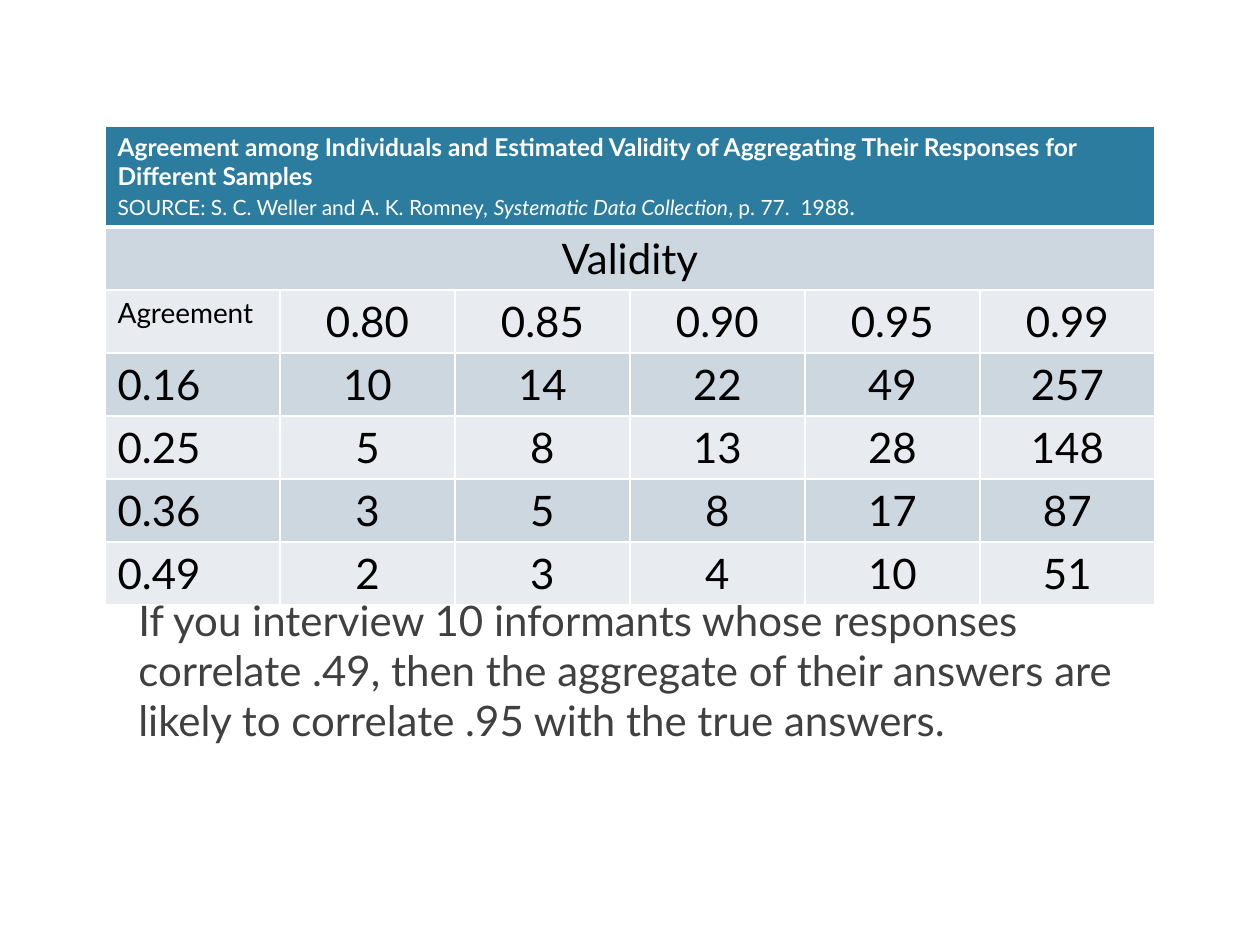
from lxml import etree
from pptx import Presentation
from pptx.dml.color import RGBColor
from pptx.enum.text import PP_ALIGN
from pptx.oxml.ns import qn
from pptx.util import Pt

LEFT, CENTER = PP_ALIGN.LEFT, PP_ALIGN.CENTER
FONT = "Lato"
WHITE, BLACK, GRAY = "FFFFFF", "000000", "404040"
HEADER_FILL, DARK_BAND, LIGHT_BAND = "2C7C9F", "CDD7DF", "E8ECF0"

# Content: each paragraph is a list of (text, format) runs
SOURCE_FORMAT = {"size": Pt(12)}
TITLE = [
    [("Agreement among Individuals and Estimated Validity of Aggregating "
      "Their Responses for Different Samples", {"size": Pt(14), "bold": True})],
    [("SOURCE: S. C. Weller and A. K. Romney, ", SOURCE_FORMAT),
     ("Systematic Data Collection", {"size": Pt(12), "italic": True}),
     (", p. 77.  1988", SOURCE_FORMAT),
     (".", {"size": Pt(14)})],
]
SPANNER = "Validity"
ROWS = [
    ("Agreement", "0.80", "0.85", "0.90", "0.95", "0.99"),
    ("0.16", "10", "14", "22", "49", "257"),
    ("0.25", "5", "8", "13", "28", "148"),
    ("0.36", "3", "5", "8", "17", "87"),
    ("0.49", "2", "3", "4", "10", "51"),
]
NOTE = ("If you interview 10 informants whose responses correlate .49, then the "
        "aggregate of their answers are likely to correlate .95 with the true answers.")

# Layout in points
TABLE_LEFT, TABLE_TOP, TABLE_WIDTH, TABLE_HEIGHT = 60, 72, 600, 232.5
ROW_HEIGHT = 29.5
NOTE_BOX = (72, 336, 606, 94)


def rgb(value):
    return RGBColor.from_string(value)


def write(text_frame, paragraphs, color, alignment=LEFT):
    for index, runs in enumerate(paragraphs):
        paragraph = text_frame.paragraphs[0] if index == 0 else text_frame.add_paragraph()
        paragraph.alignment = alignment
        for text, formats in runs:
            run = paragraph.add_run()
            run.text = text
            run.font.color.rgb = rgb(color)
            for name, value in {"name": FONT, "bold": False, **formats}.items():
                setattr(run.font, name, value)


def style_cell(cell, fill, bottom_width=1):
    properties = cell._tc.get_or_add_tcPr()
    for side in ("lnL", "lnR", "lnT", "lnB"):
        width = bottom_width if side == "lnB" else 1
        line = etree.SubElement(properties, qn(f"a:{side}"), w=str(Pt(width)))
        line_fill = etree.SubElement(line, qn("a:solidFill"))
        etree.SubElement(line_fill, qn("a:srgbClr"), val=WHITE)
    cell.fill.solid()
    cell.fill.fore_color.rgb = rgb(fill)


presentation = Presentation()
presentation.slide_width, presentation.slide_height = Pt(720), Pt(540)
slide = presentation.slides.add_slide(presentation.slide_layouts[6])

# Table frame, bands and borders
row_count, column_count = len(ROWS) + 2, len(ROWS[0])
frame = slide.shapes.add_table(row_count, column_count, Pt(TABLE_LEFT), Pt(TABLE_TOP),
                               Pt(TABLE_WIDTH), Pt(TABLE_HEIGHT))
table = frame.table
for row_index, row in enumerate(table.rows):
    row.height = Pt(ROW_HEIGHT)
    band = DARK_BAND if row_index % 2 else LIGHT_BAND
    for cell in row.cells:
        if row_index == 0:
            style_cell(cell, HEADER_FILL, bottom_width=3)
        else:
            style_cell(cell, band)
frame.height = Pt(TABLE_HEIGHT)

# Title and spanner rows
for row_index in (0, 1):
    table.cell(row_index, 0).merge(table.cell(row_index, column_count - 1))
write(table.cell(0, 0).text_frame, TITLE, WHITE)
write(table.cell(1, 0).text_frame, [[(SPANNER, {"size": Pt(24)})]], BLACK, CENTER)

# Column heads and values
for row_index, values in enumerate(ROWS, start=2):
    for column_index, value in enumerate(values):
        size = 16 if value == "Agreement" else 24
        write(table.cell(row_index, column_index).text_frame,
              [[(value, {"size": Pt(size)})]], BLACK, CENTER if column_index else LEFT)

# Reading example below the table
note = slide.shapes.add_textbox(*map(Pt, NOTE_BOX))
note.text_frame.word_wrap = True
write(note.text_frame, [[(NOTE, {"size": Pt(24)})]], GRAY)

presentation.save("out.pptx")
